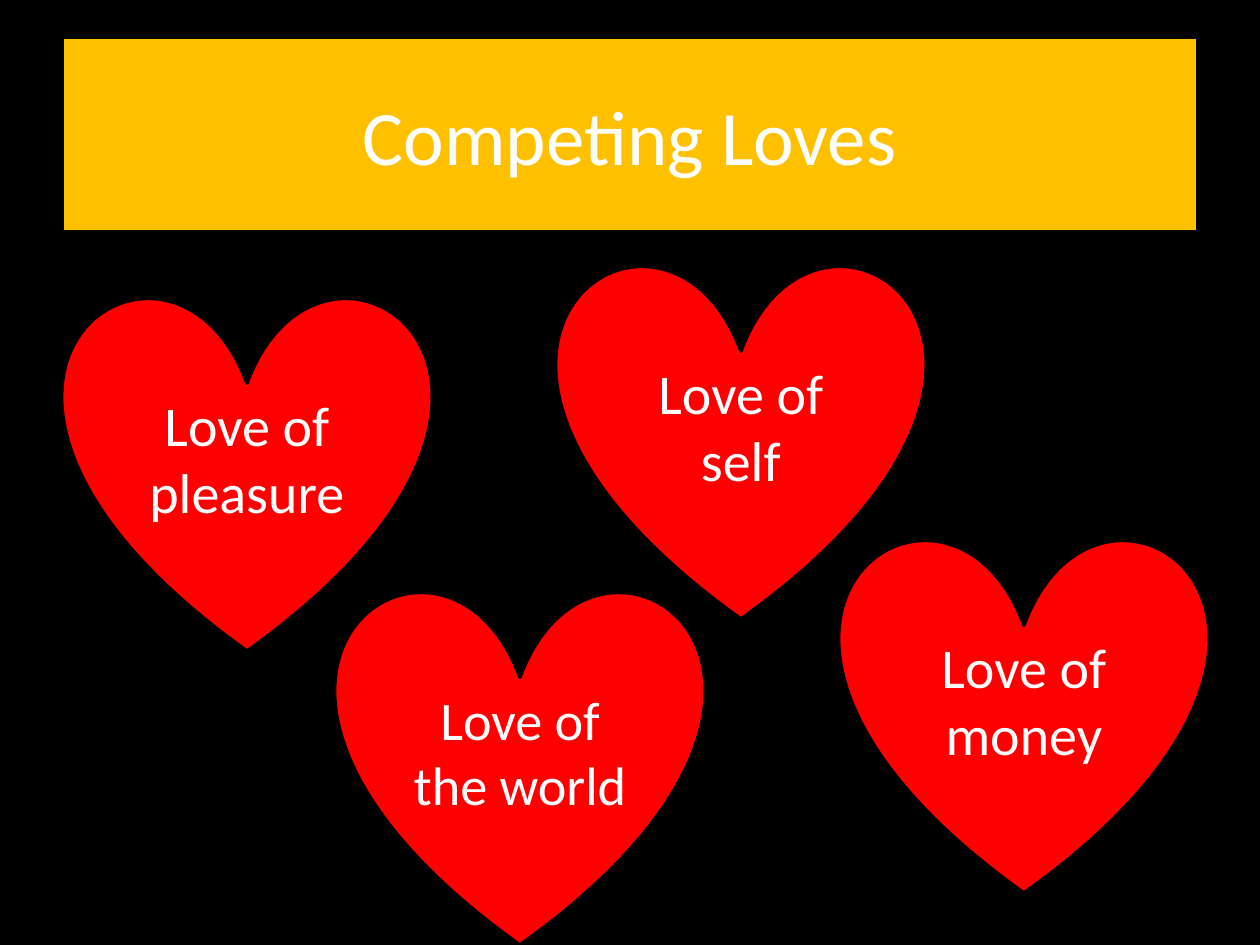
"""Build a slide of four hearts naming competing loves under a title band."""
import pptx
import pptx.dml.color
import pptx.enum.shapes
import pptx.enum.text
import pptx.oxml
import pptx.oxml.ns
import pptx.util

TITLE = "Competing Loves"
BAND = (63, 38, 1134, 193)
HEARTS = [
    ("Love of pleasure", 63, 294, 32),
    ("Love of money", 840, 536, 32),
    ("Love of the world", 336, 588, 31),
    ("Love of self", 557, 262, 32),
]
HEART = (368, 357)
THEME = dict(back="000000", band="FFC000", heart="FF0000", text="FFFFFF",
             font="Calibri", title=44, edge=0.75, rim=2)
SCALE = 914400 // 126
SHADE = (
    f'<a:effectLst {pptx.oxml.ns.nsdecls("a")}>'
    '<a:outerShdw blurRad="38100" dist="38100" dir="2700000" algn="tl">'
    '<a:srgbClr val="000000"/></a:outerShdw></a:effectLst>'
)
KIND = pptx.enum.shapes.MSO_SHAPE


def tint(name):
    return pptx.dml.color.RGBColor.from_string(THEME[name])


def add(slide, kind, box, text, size, fill, width):
    shape = slide.shapes.add_shape(kind, *(n * SCALE for n in box))
    shape.shadow.inherit = False
    shape.fill.solid()
    shape.fill.fore_color.rgb = tint(fill)
    shape.line.color.rgb = tint("back")
    shape.line.width = pptx.util.Pt(width)
    frame = shape.text_frame
    frame.word_wrap = True
    frame.vertical_anchor = pptx.enum.text.MSO_ANCHOR.MIDDLE
    para = frame.paragraphs[0]
    para.alignment = pptx.enum.text.PP_ALIGN.CENTER
    run = para.add_run()
    run.text = text
    para.font.name = THEME["font"]
    para.font.size = pptx.util.Pt(size)
    para.font.color.rgb = tint("text")
    run.font._element.append(pptx.oxml.parse_xml(SHADE))


def main():
    deck = pptx.Presentation()
    deck.slide_width, deck.slide_height = pptx.util.Inches(10), pptx.util.Inches(7.5)
    slide = deck.slides.add_slide(deck.slide_layouts[6])
    slide.background.fill.solid()
    slide.background.fill.fore_color.rgb = tint("back")
    add(slide, KIND.RECTANGLE, BAND, TITLE, THEME["title"], "band", THEME["edge"])
    for text, left, top, size in HEARTS:
        add(slide, KIND.HEART, (left, top, *HEART), text, size, "heart", THEME["rim"])
    deck.save("out.pptx")


if __name__ == "__main__":
    main()
